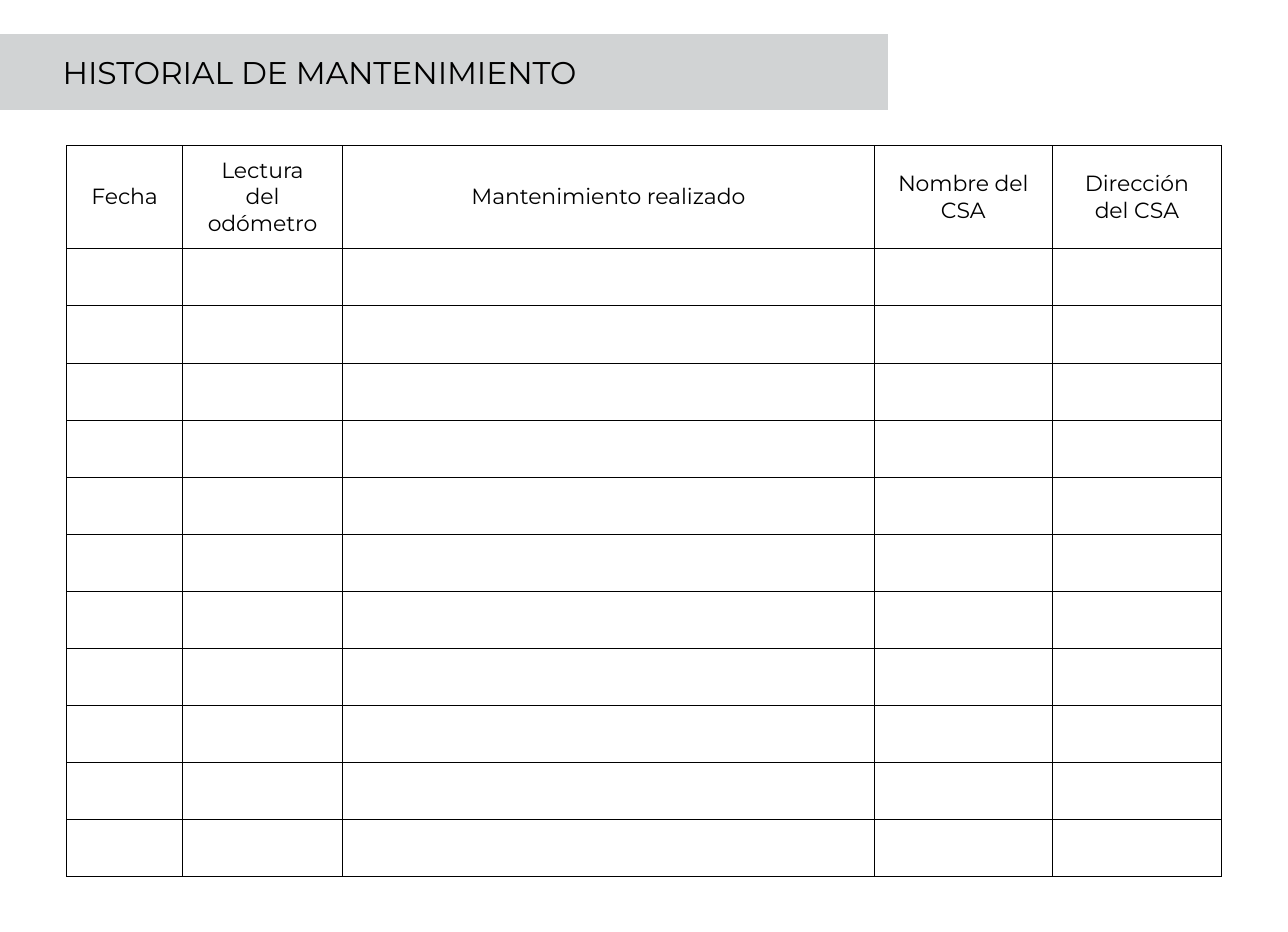
from lxml import etree
from pptx import Presentation
from pptx.dml.color import RGBColor
from pptx.enum.text import MSO_ANCHOR, MSO_AUTO_SIZE, PP_ALIGN
from pptx.oxml.ns import qn
from pptx.util import Pt

MIDDLE = MSO_ANCHOR.MIDDLE
NO_AUTOFIT = MSO_AUTO_SIZE.NONE
LEFT, CENTER = PP_ALIGN.LEFT, PP_ALIGN.CENTER

COLORS = {"ink": "000000", "band": "D1D3D4", "paper": "FFFFFF"}
FONT = "Montserrat"
HEADER_SIZE = 7
BORDER_WIDTH = 0.25
HEADER_HEIGHT, ENTRY_HEIGHT = 32.9, 18.2
ENTRY_COUNT = 11
COLUMNS = [
    ("Fecha", 37),
    ("Lectura del odómetro", 51),
    ("Mantenimiento realizado", 169.8),
    ("Nombre del CSA", 56.8),
    ("Dirección del CSA", 54),
]


def write(text, frame, size, align):
    paragraph = frame.paragraphs[0]
    paragraph.alignment = align
    if not text:
        etree.SubElement(paragraph._p, qn("a:endParaRPr"), sz=str(size * 100))
        return
    run = paragraph.add_run()
    run.text = text
    run.font.name = FONT
    run.font.size = Pt(size)
    run.font.bold = False
    run.font.color.rgb = RGBColor.from_string(COLORS["ink"])


def add_borders(cell):
    properties = cell._tc.get_or_add_tcPr()
    for side in ("lnL", "lnR", "lnT", "lnB"):
        line = etree.SubElement(properties, qn(f"a:{side}"), w=str(Pt(BORDER_WIDTH)))
        fill = etree.SubElement(line, qn("a:solidFill"))
        etree.SubElement(fill, qn("a:srgbClr"), val=COLORS["ink"])


prs = Presentation()
prs.slide_width, prs.slide_height = Pt(411.12), Pt(297.36)
slide = prs.slides.add_slide(prs.slide_layouts[5])
slide.background.fill.solid()
slide.background.fill.fore_color.rgb = RGBColor.from_string(COLORS["paper"])

heading = slide.shapes.title
heading.left, heading.top = Pt(0), Pt(10.9)
heading.width, heading.height = Pt(283.4), Pt(24.2)
heading.fill.solid()
heading.fill.fore_color.rgb = RGBColor.from_string(COLORS["band"])
heading_frame = heading.text_frame
heading_frame.auto_size = NO_AUTOFIT
heading_frame.word_wrap = True
heading_frame.vertical_anchor = MIDDLE
heading_frame.margin_left = Pt(20)
heading_frame.margin_top = heading_frame.margin_right = heading_frame.margin_bottom = Pt(0)
write("HISTORIAL DE MANTENIMIENTO", frame=heading_frame, size=10, align=LEFT)

history = slide.shapes.add_table(
    ENTRY_COUNT + 1, len(COLUMNS), Pt(21.3), Pt(46.5),
    Pt(sum(width for _, width in COLUMNS)),
    Pt(HEADER_HEIGHT + ENTRY_COUNT * ENTRY_HEIGHT),
).table
history.first_row = False
history.horz_banding = False

for column, (_, width) in zip(history.columns, COLUMNS):
    column.width = Pt(width)

for row_index, row in enumerate(history.rows):
    is_header = row_index == 0
    row.height = Pt(HEADER_HEIGHT if is_header else ENTRY_HEIGHT)
    for cell, (label, _) in zip(row.cells, COLUMNS):
        add_borders(cell)
        cell.fill.background()
        cell.vertical_anchor = MIDDLE
        cell.margin_top = cell.margin_bottom = Pt(3)
        write(label if is_header else "", frame=cell.text_frame,
              size=HEADER_SIZE, align=CENTER)

prs.save("out.pptx")
